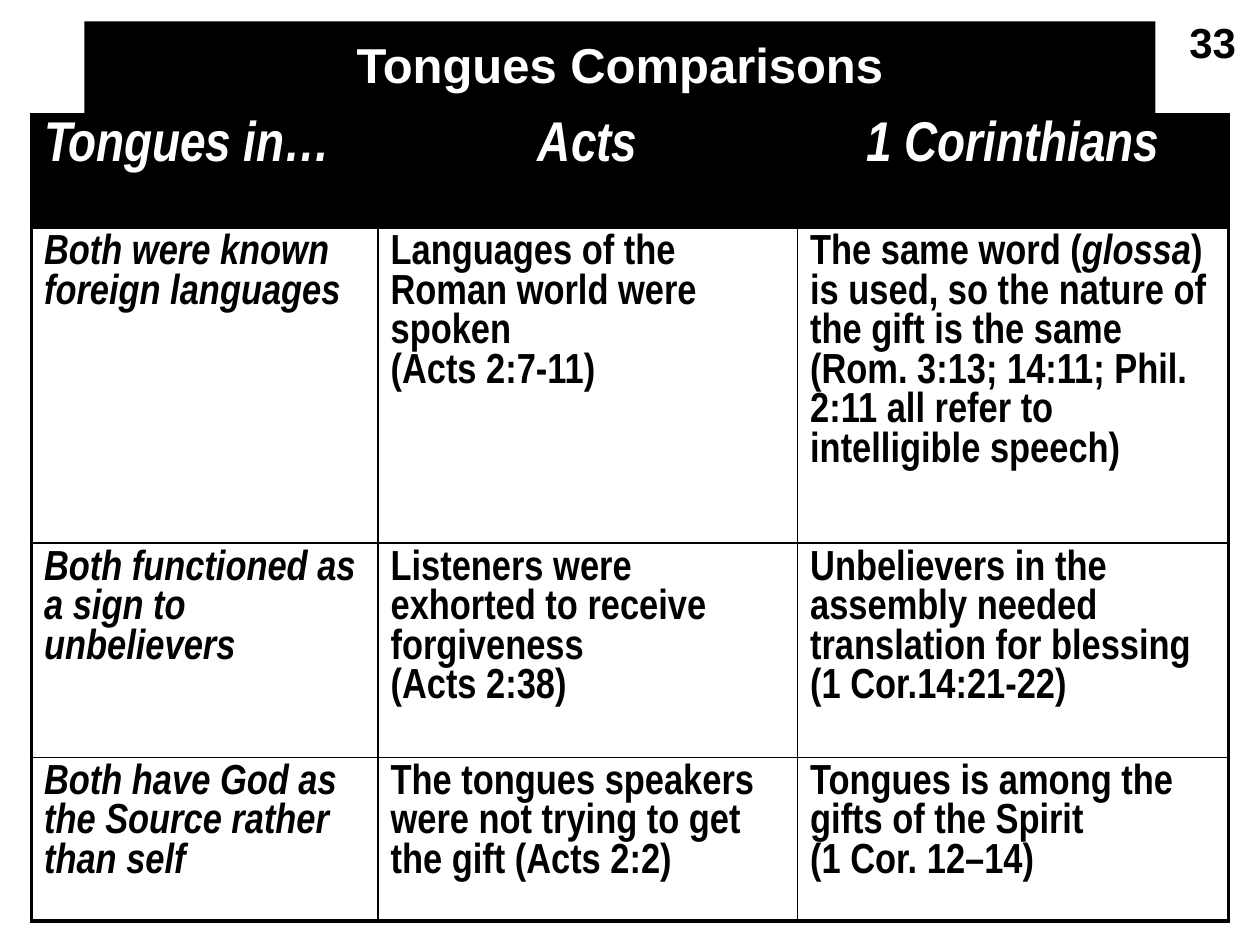
from dataclasses import dataclass

from lxml.etree import SubElement
from pptx import Presentation
from pptx.dml.color import RGBColor
from pptx.enum.shapes import MSO_SHAPE
from pptx.enum.text import MSO_ANCHOR, PP_ALIGN
from pptx.oxml.ns import qn
from pptx.util import Inches, Pt


@dataclass(frozen=True)
class Theme:
    black: RGBColor = RGBColor(0, 0, 0)
    white: RGBColor = RGBColor(255, 255, 255)
    heading_font: str = "Arial"
    table_font: str = "Arial Narrow"
    title_size: int = 28
    header_size: int = 32
    body_size: int = 24
    outer_line: float = 2.25
    inner_line: float = 1


THEME = Theme()
COLUMN_WIDTHS = (2.75, 3.33, 3.42)
ROW_HEIGHTS = (0.9, 2.5, 1.7, 1.3)
HEADERS = ("Tongues in…", "Acts", "1 Corinthians")
# An asterisk switches italics on or off; a newline is a line break.
COMPARISONS = (
    (
        "*Both were known foreign languages",
        "Languages of the Roman world were spoken \n(Acts 2:7-11)",
        "The same word (*glossa*) is used, so the nature of the gift is the same "
        "(Rom. 3:13; 14:11; Phil. 2:11 all refer to intelligible speech)",
    ),
    (
        "*Both functioned as a sign to unbelievers",
        "Listeners were exhorted to receive forgiveness \n(Acts 2:38)",
        "Unbelievers in the assembly needed translation for blessing \n(1 Cor.14:21-22)",
    ),
    (
        "*Both have God as the Source rather than self",
        "The tongues speakers were not trying to get the gift (Acts 2:2)",
        "Tongues is among the gifts of the Spirit \n(1 Cor. 12–14)",
    ),
)


def write_text(frame, text, *, font, size, color, align=PP_ALIGN.LEFT):
    """Write bold text, with italics between asterisks."""
    para = frame.paragraphs[0]
    para.alignment = align
    para.font.size = Pt(size)
    for index, part in enumerate(text.split("*")):
        for line_number, line in enumerate(part.split("\n")):
            if line_number:
                para.add_line_break()
            if not line:
                continue
            span = para.add_run()
            span.text = line
            span.font.name = font
            span.font.size = Pt(size)
            span.font.bold = True
            span.font.italic = index % 2 == 1
            span.font.color.rgb = color


def add_page_number(page):
    box = page.shapes.add_textbox(Inches(9.34), Inches(0.08), Inches(0.57), Inches(0.5))
    box.text_frame.word_wrap = False
    write_text(box.text_frame, "33", font=THEME.heading_font, size=THEME.body_size,
               color=THEME.black, align=PP_ALIGN.CENTER)


def add_title(page):
    bar = page.shapes.add_shape(MSO_SHAPE.RECTANGLE, Inches(0.67), Inches(0.17),
                                Inches(8.5), Inches(0.75))
    bar.shadow.inherit = False
    bar.fill.solid()
    bar.fill.fore_color.rgb = THEME.black
    bar.line.fill.background()
    frame = bar.text_frame
    frame.word_wrap = True
    frame.vertical_anchor = MSO_ANCHOR.TOP
    frame.margin_top = Inches(0.1)
    write_text(frame, "Tongues Comparisons", font=THEME.heading_font,
               size=THEME.title_size, color=THEME.white, align=PP_ALIGN.CENTER)


def set_borders(cell, outer_sides):
    """Draw all four borders, heavier on the sides at the table's edge."""
    properties = cell._tc.get_or_add_tcPr()
    for position, side in enumerate(("L", "R", "T", "B")):
        width = THEME.outer_line if side in outer_sides else THEME.inner_line
        line = SubElement(properties, qn(f"a:ln{side}"), w=str(Pt(width)))
        fill = SubElement(line, qn("a:solidFill"))
        SubElement(fill, qn("a:srgbClr"), val=str(THEME.black))
        properties.insert(position, line)


def fill_cell(cell, text, row, column):
    is_header = row == 0
    if is_header:
        cell.fill.solid()
        cell.fill.fore_color.rgb = THEME.black
    else:
        cell.fill.background()
    edges = {
        "L": column == 0,
        "R": column == len(COLUMN_WIDTHS) - 1,
        "T": is_header,
        "B": row == len(ROW_HEIGHTS) - 1,
    }
    set_borders(cell, [side for side, at_edge in edges.items() if at_edge])
    write_text(
        cell.text_frame,
        f"*{text}" if is_header else text,
        font=THEME.table_font,
        size=THEME.header_size if is_header else THEME.body_size,
        color=THEME.white if is_header else THEME.black,
        align=PP_ALIGN.CENTER if is_header and column else PP_ALIGN.LEFT,
    )


def add_comparison_table(page):
    table = page.shapes.add_table(
        len(ROW_HEIGHTS), len(COLUMN_WIDTHS), Inches(0.25), Inches(0.91),
        Inches(sum(COLUMN_WIDTHS)), Inches(sum(ROW_HEIGHTS))).table
    table.first_row = False
    table.horz_banding = False
    for column, width in zip(table.columns, COLUMN_WIDTHS):
        column.width = Inches(width)
    for row, height in zip(table.rows, ROW_HEIGHTS):
        row.height = Inches(height)
    for row, texts in enumerate((HEADERS, *COMPARISONS)):
        for column, text in enumerate(texts):
            fill_cell(table.cell(row, column), text, row, column)


def main():
    deck = Presentation()
    deck.slide_width, deck.slide_height = Inches(10), Inches(7.5)
    page = deck.slides.add_slide(deck.slide_layouts[6])
    add_page_number(page)
    add_title(page)
    add_comparison_table(page)
    deck.save("out.pptx")


if __name__ == "__main__":
    main()
